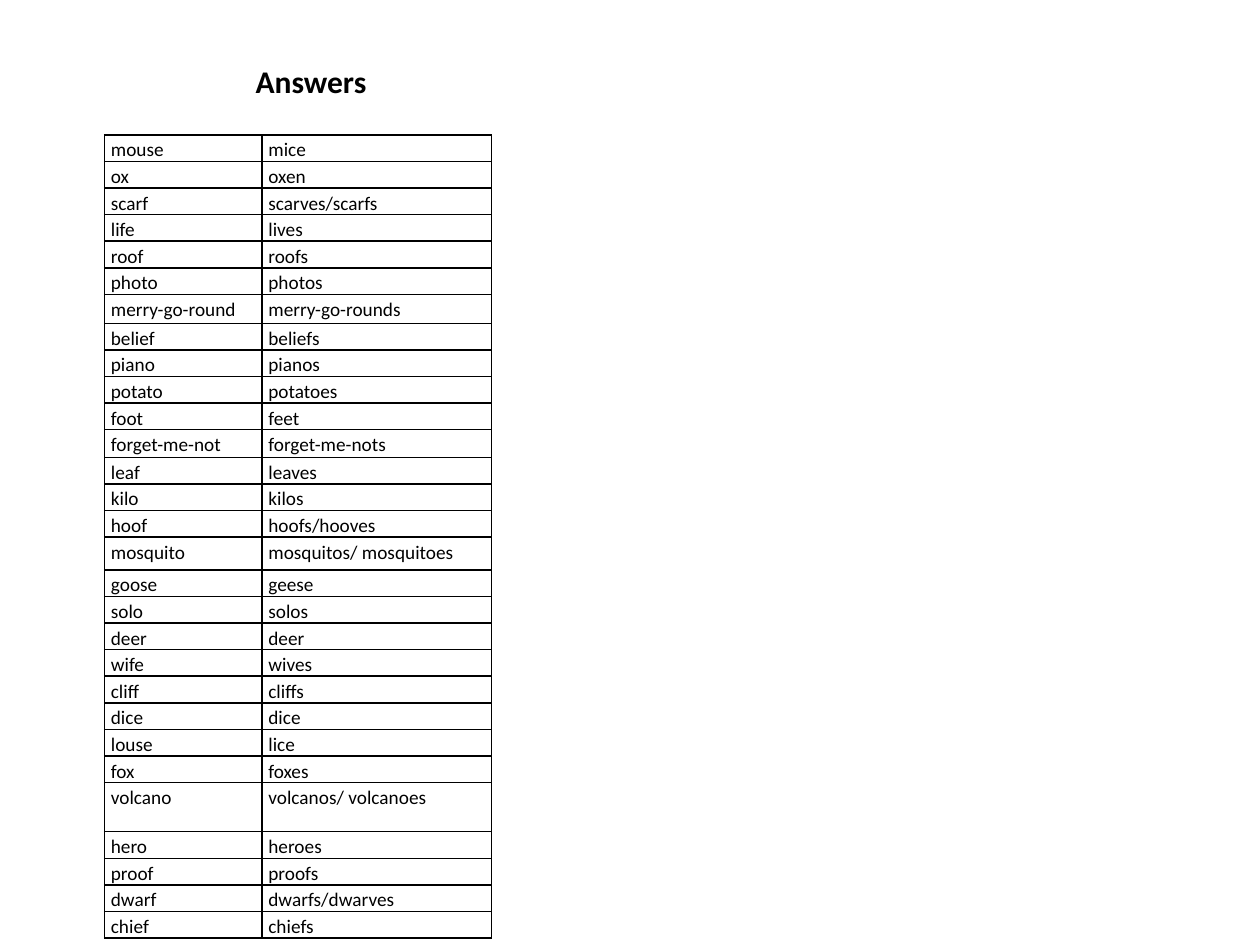
from lxml.etree import SubElement
from pptx import Presentation
from pptx.dml.color import RGBColor as RGB
from pptx.enum.text import MSO_AUTO_SIZE as Fit
from pptx.oxml.ns import qn
from pptx.util import Inches, Pt

BLACK = "000000"


def write(para, text, size, bold=False):
    run = para.add_run()
    run.text = text
    font = run.font
    font.name, font.size, font.bold = "Calibri", Pt(size), bold
    font.color.rgb = RGB.from_string(BLACK)


def border(cell):
    props = cell._tc.get_or_add_tcPr()
    for side in ("lnL", "lnR", "lnT", "lnB"):
        line = SubElement(props, qn("a:" + side), w=str(Pt(1)))
        fill = SubElement(line, qn("a:solidFill"))
        SubElement(fill, qn("a:srgbClr"), val=BLACK)


words = [
    ("mouse", "mice"), ("ox", "oxen"), ("scarf", "scarves/scarfs"),
    ("life", "lives"), ("roof", "roofs"), ("photo", "photos"),
    ("merry-go-round", "merry-go-rounds"), ("belief", "beliefs"),
    ("piano", "pianos"), ("potato", "potatoes"), ("foot", "feet"),
    ("forget-me-not", "forget-me-nots"), ("leaf", "leaves"),
    ("kilo", "kilos"), ("hoof", "hoofs/hooves"),
    ("mosquito", "mosquitos/ mosquitoes"), ("goose", "geese"),
    ("solo", "solos"), ("deer", "deer"), ("wife", "wives"),
    ("cliff", "cliffs"), ("dice", "dice"), ("louse", "lice"),
    ("fox", "foxes"), ("volcano", "volcanos/ volcanoes"),
    ("hero", "heroes"), ("proof", "proofs"),
    ("dwarf", "dwarfs/dwarves"), ("chief", "chiefs"),
]
# Rows taller than the usual height
tall = {"merry-go-round": 0.23, "forget-me-not": 0.22,
        "mosquito": 0.26, "volcano": 0.39}

deck = Presentation()
deck.slide_width, deck.slide_height = Inches(10), Inches(7.5)
slide = deck.slides.add_slide(deck.slide_layouts[6])

# Title
box = slide.shapes.add_textbox(Inches(1.93), Inches(0.44), Inches(1.09), Inches(0.4))
frame = box.text_frame
frame.word_wrap = False
frame.auto_size = Fit.SHAPE_TO_FIT_TEXT
write(frame.paragraphs[0], "Answers", 18, bold=True)

# Table of singulars and plurals
table = slide.shapes.add_table(len(words), 2, Inches(0.83), Inches(1.07),
                               Inches(3.07), Inches(6.06)).table
table.first_row = table.horz_banding = False
for col, width in zip(table.columns, (1.25, 1.82)):
    col.width = Inches(width)

for row, pair in zip(table.rows, words):
    row.height = Inches(tall.get(pair[0], 0.19))
    for cell, word in zip(row.cells, pair):
        cell.margin_left = cell.margin_right = Inches(0.05)
        cell.margin_top = cell.margin_bottom = 0
        border(cell)
        cell.fill.background()
        para = cell.text_frame.paragraphs[0]
        para.line_spacing = 1.15
        write(para, word, 11)

deck.save("out.pptx")
